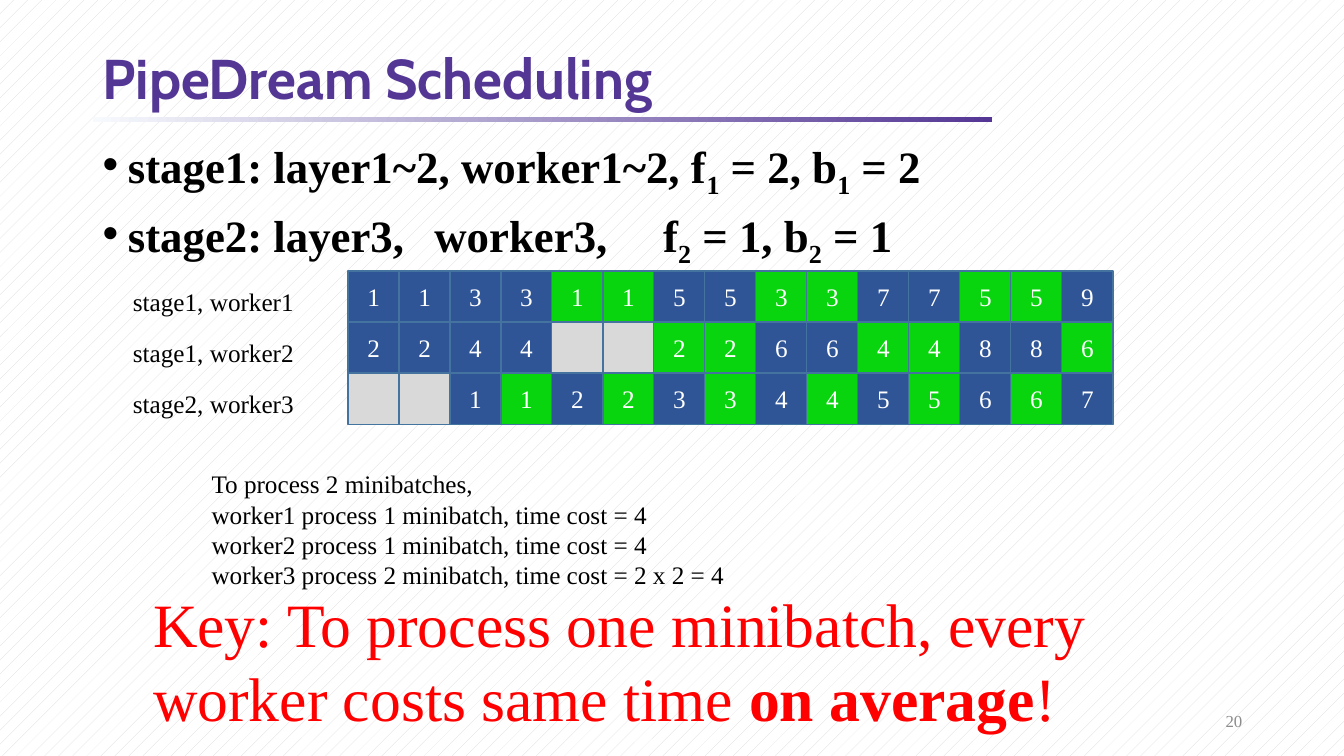
"""Build the PipeDream scheduling slide."""
from lxml import etree
from pptx import Presentation
from pptx.dml.color import RGBColor
from pptx.enum.dml import MSO_PATTERN
from pptx.enum.shapes import MSO_SHAPE
from pptx.enum.text import MSO_ANCHOR, MSO_AUTO_SIZE, PP_ALIGN
from pptx.oxml.ns import qn
from pptx.util import Inches, Pt

PURPLE = RGBColor(0x54, 0x37, 0x95)
PALE = RGBColor(0xF7, 0xFA, 0xFD)
BLUE = RGBColor(0x2F, 0x55, 0x97)
GREEN = RGBColor(0x09, 0xD5, 0x0E)
GRAY = RGBColor(0xD9, 0xD9, 0xD9)
BORDER = RGBColor(0x43, 0x73, 0x9E)
NUMBER = RGBColor(0x8C, 0x8C, 0x8C)
RED = RGBColor(0xFF, 0x00, 0x00)
BLACK = RGBColor(0x00, 0x00, 0x00)
WHITE = RGBColor(0xFF, 0xFF, 0xFF)
SERIF = "Times New Roman"

prs = Presentation()
prs.slide_width, prs.slide_height = Inches(13.33), Inches(7.5)
s = prs.slides.add_slide(prs.slide_layouts[6])
bg = s.background.fill
bg.patterned()
bg.pattern = MSO_PATTERN.PERCENT_5
bg.fore_color.rgb, bg.back_color.rgb = GRAY, WHITE


def add_run(p, text, size, color, bold=False, font=SERIF):
    r = p.add_run()
    r.text = text
    r.font.name, r.font.size, r.font.bold = font, Pt(size), bold
    r.font.color.rgb = color
    return r


def add_box(left, top, width, height, wrap=True, anchor=MSO_ANCHOR.TOP):
    tf = s.shapes.add_textbox(Inches(left), Inches(top), Inches(width), Inches(height)).text_frame
    tf.word_wrap = wrap
    tf.auto_size = MSO_AUTO_SIZE.NONE
    tf.vertical_anchor = anchor
    return tf


rule = s.shapes.add_shape(MSO_SHAPE.RECTANGLE, Inches(0.92), Inches(1.16), Inches(8.92), Inches(0.05))
rule.shadow.inherit = False
rule.line.fill.background()
rule.fill.gradient()
rule.fill.gradient_angle = 0
for stop, color in zip(rule.fill.gradient_stops, (PALE, PURPLE)):
    stop.color.rgb = color

p = add_box(9.42, 6.95, 3, 0.4, anchor=MSO_ANCHOR.MIDDLE).paragraphs[0]
p.alignment = PP_ALIGN.RIGHT
add_run(p, "20", 12, NUMBER)

p = add_box(0.92, 0.43, 11.5, 0.75, anchor=MSO_ANCHOR.MIDDLE).paragraphs[0]
p.line_spacing = 0.9
add_run(p, "PipeDream Scheduling", 40, PURPLE, True, "Cabin")

stages = [
    ("stage1: layer1~2, worker1~2, f", "1", " = 2, b", "1", " = 2"),
    ("stage2: layer3,\tworker3,\tf", "2", " = 1, b", "2", " = 1"),
]
tf = add_box(0.92, 1.33, 11.5, 1.21)
for i, parts in enumerate(stages):
    p = tf.add_paragraph() if i else tf.paragraphs[0]
    p.line_spacing = 0.9
    p.space_before = Pt(10 if i else 0)
    pPr = p._p.get_or_add_pPr()
    pPr.set("marL", str(Inches(0.25)))
    pPr.set("indent", str(-Inches(0.25)))
    etree.SubElement(pPr, qn("a:buFont"), typeface="Arial")
    etree.SubElement(pPr, qn("a:buChar"), char="•")
    tabs = etree.SubElement(pPr, qn("a:tabLst"))
    for stop in (3.29, 5.56):
        etree.SubElement(tabs, qn("a:tab"), pos=str(Inches(stop)), algn="l")
    for j, text in enumerate(parts):
        r = add_run(p, text, 32, BLACK, True)
        if j % 2:
            r.font._element.set("baseline", "-25000")

FILLS = {"F": BLUE, "B": GREEN, "-": GRAY}
schedule = [
    ("stage1, worker1", "F1 F1 F3 F3 B1 B1 F5 F5 B3 B3 F7 F7 B5 B5 F9"),
    ("stage1, worker2", "F2 F2 F4 F4 - - B2 B2 F6 F6 B4 B4 F8 F8 B6"),
    ("stage2, worker3", "- - F1 B1 F2 B2 F3 B3 F4 B4 F5 B5 F6 B6 F7"),
]
for row, (worker, steps) in enumerate(schedule):
    offset = 1.01 * row / 2
    p = add_box(1.22, 2.79 + offset, 1.81, 0.4, wrap=False).paragraphs[0]
    add_run(p, worker, 18, BLACK)
    for col, step in enumerate(steps.split()):
        sp = s.shapes.add_shape(MSO_SHAPE.RECTANGLE, Inches(3.45 + 7.08 * col / 14),
                                Inches(2.69 + offset), Inches(0.51), Inches(0.51))
        sp.shadow.inherit = False
        sp.fill.solid()
        sp.fill.fore_color.rgb = FILLS[step[0]]
        sp.line.color.rgb, sp.line.width = BORDER, Pt(1)
        if step != "-":
            sp.text_frame.vertical_anchor = MSO_ANCHOR.MIDDLE
            p = sp.text_frame.paragraphs[0]
            p.alignment = PP_ALIGN.CENTER
            add_run(p, step[1], 18, WHITE)

costs = [
    "To process 2 minibatches,",
    "worker1 process 1 minibatch, time cost = 4",
    "worker2 process 1 minibatch, time cost = 4",
    "worker3 process 2 minibatch, time cost = 2 x 2 = 4",
]
tf = add_box(2, 4.6, 5.34, 1.31, wrap=False)
for i, cost in enumerate(costs):
    p = tf.add_paragraph() if i else tf.paragraphs[0]
    add_run(p, cost, 18, BLACK)

p = add_box(1.42, 5.76, 9.61, 1.58).paragraphs[0]
add_run(p, "Key: To process one minibatch, every worker costs same time ", 44, RED)
add_run(p, "on average", 44, RED, True)
add_run(p, "!", 44, RED)

prs.save("out.pptx")
